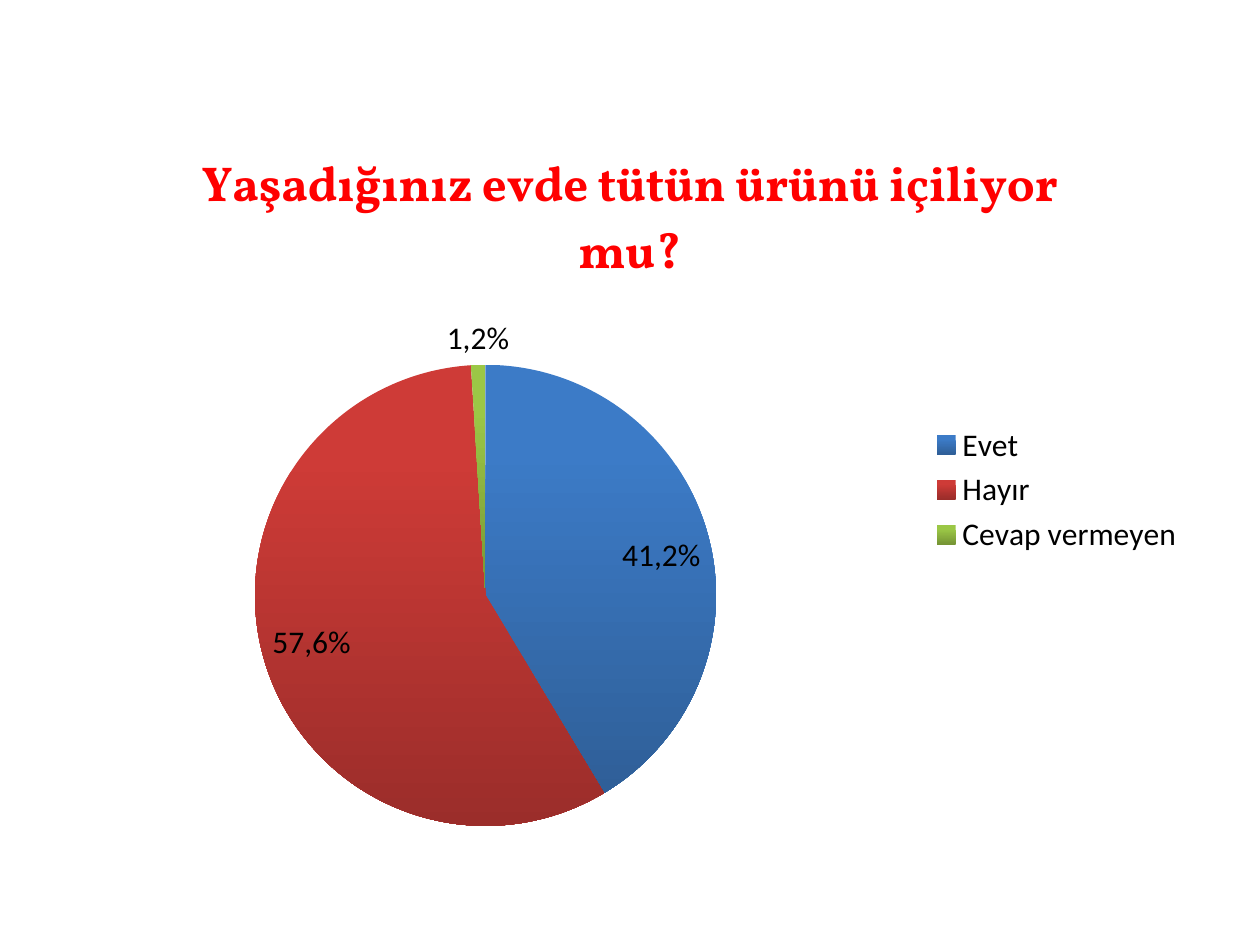
from lxml import etree
from pptx import Presentation
from pptx.chart.data import CategoryChartData
from pptx.dml.color import RGBColor
from pptx.enum.chart import XL_CHART_TYPE as ChartType
from pptx.enum.chart import XL_LABEL_POSITION as LabelPosition
from pptx.enum.chart import XL_LEGEND_POSITION as LegendPosition
from pptx.oxml.ns import qn
from pptx.util import Pt

CHART_WIDTH, CHART_HEIGHT = 658.8, 405.4
TITLE = "Yaşadığınız evde tütün ürünü içiliyor mu?"
# answer, value, label, label position, top colour, bottom colour
ANSWERS = [
    ("Evet", 41, "41,2%", LabelPosition.INSIDE_END, "3C7BC7", "2F5F98"),
    ("Hayır", 57, "57,6%", LabelPosition.INSIDE_END, "CE3B37", "9B2D2A"),
    ("Cevap vermeyen", 1, "1,2%", LabelPosition.OUTSIDE_END, "9BC746", "769535"),
]


def color(hex_string):
    return RGBColor.from_string(hex_string)


def style_font(font, name, size, hex_string, bold=False):
    font.name = name
    font.size = Pt(size)
    font.bold = bold
    font.color.rgb = color(hex_string)


def set_layout(parent, before, target=None, **points):
    """Place a chart part, in points from the chart's top left corner."""
    for old in parent.findall(qn("c:layout")):
        parent.remove(old)
    layout = etree.Element(qn("c:layout"))
    manual = etree.SubElement(layout, qn("c:manualLayout"))
    if target:
        etree.SubElement(manual, qn("c:layoutTarget")).set("val", target)
    for axis in ("x", "y"):
        etree.SubElement(manual, qn(f"c:{axis}Mode")).set("val", "edge")
    for key, value in points.items():
        whole = CHART_WIDTH if key in ("x", "w") else CHART_HEIGHT
        etree.SubElement(manual, qn(f"c:{key}")).set("val", str(value / whole))
    parent.find(qn(before)).addprevious(layout)


def add_pie(slide):
    data = CategoryChartData()
    data.categories = [answer[0] for answer in ANSWERS]
    data.add_series("Series 1", [answer[1] for answer in ANSWERS])
    frame = slide.shapes.add_chart(
        ChartType.PIE, Pt(25.2), Pt(77), Pt(CHART_WIDTH), Pt(CHART_HEIGHT), data)
    chart = frame.chart
    style_font(chart.font, "Calibri", 18, "000000")
    return chart


def add_title(chart):
    chart.has_title = True
    title = chart.chart_title
    paragraph = title.text_frame.paragraphs[0]
    paragraph.text = TITLE
    for font in (paragraph.font, paragraph.runs[0].font):
        style_font(font, "Vollkorn", 28, "FF0000", bold=True)
    title.include_in_layout = False
    set_layout(title._element, "c:overlay", x=85, y=3.5)


def add_legend(chart):
    chart.has_legend = True
    legend = chart.legend
    legend.position = LegendPosition.RIGHT
    legend.include_in_layout = False
    style_font(legend.font, "Calibri", 18, "000000")
    set_layout(legend._element, "c:overlay", x=506, y=162.5, w=145, h=81)


def style_slice(point, label, position, top, bottom):
    fill = point.format.fill
    fill.gradient()
    fill.gradient_angle = 270
    for stop, place, shade in zip(fill.gradient_stops, (0.2, 1), (top, bottom)):
        stop.position = place
        stop.color.rgb = color(shade)
    point.format.line.fill.background()
    paragraph = point.data_label.text_frame.paragraphs[0]
    paragraph.text = label
    style_font(paragraph.runs[0].font, "Calibri", 18, "000000")
    point.data_label.position = position


def main():
    presentation = Presentation()
    presentation.slide_width, presentation.slide_height = Pt(720), Pt(540)
    slide = presentation.slides.add_slide(presentation.slide_layouts[6])

    # Chart with its title and legend
    chart = add_pie(slide)
    add_title(chart)
    add_legend(chart)

    # Slices and their labels
    plot = chart.plots[0]
    plot.vary_by_categories = True
    plot.has_data_labels = True
    plot.data_labels.show_percentage = True
    plot.data_labels.show_value = False
    for index, (_, _, *style) in enumerate(ANSWERS):
        style_slice(plot.series[0].points[index], *style)
    set_layout(plot._element.getparent(), "c:pieChart", "inner",
               x=120.5, y=131.5, w=263.5, h=263.5)

    presentation.save("out.pptx")


if __name__ == "__main__":
    main()
